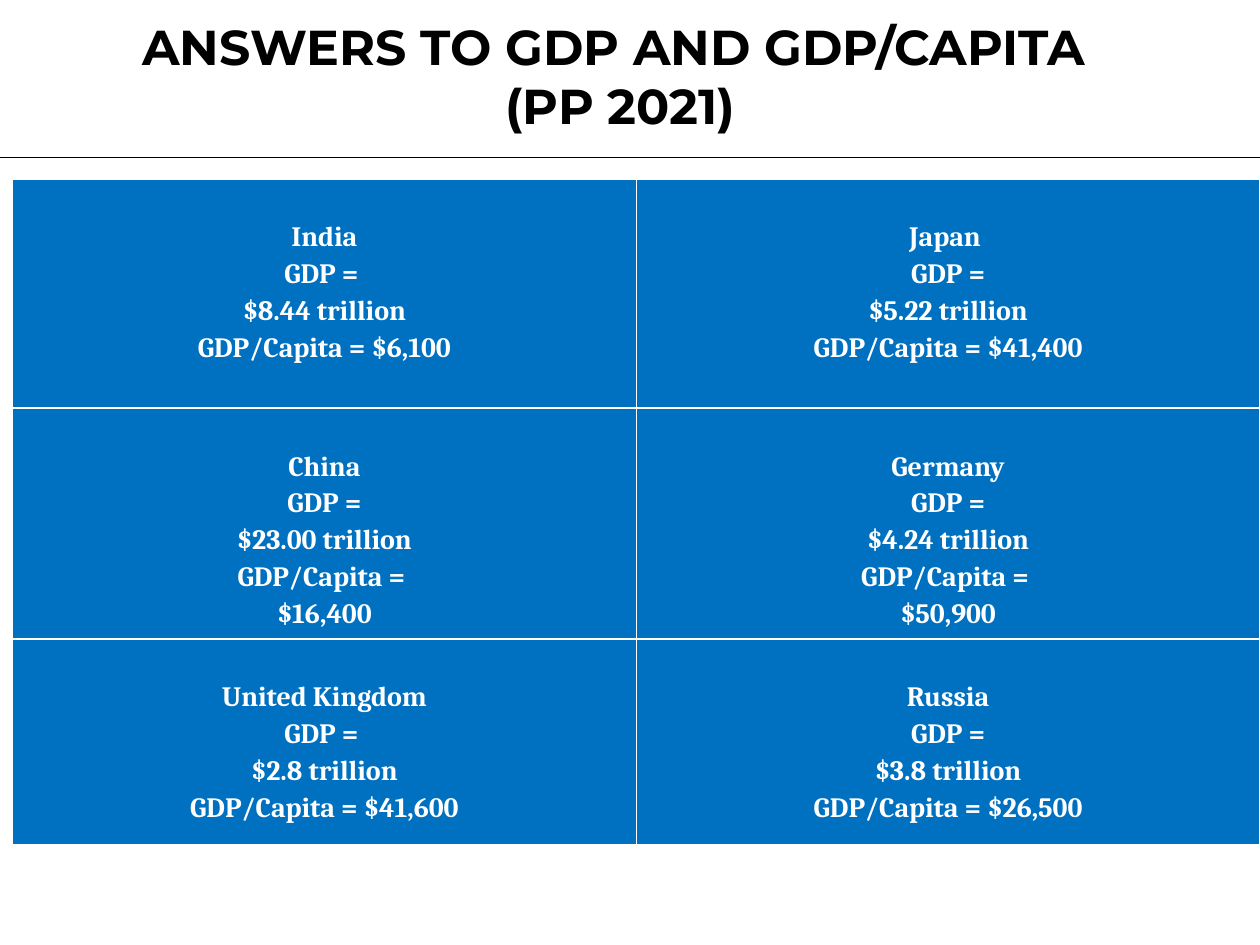
from pptx import Presentation
from pptx.dml.color import RGBColor
from pptx.enum.shapes import MSO_CONNECTOR
from pptx.enum.text import MSO_ANCHOR, PP_ALIGN
from pptx.oxml import parse_xml
from pptx.oxml.ns import nsdecls
from pptx.util import Inches, Pt
from lxml.etree import SubElement
from pptx.oxml.ns import qn

COLORS = {"text": "000000", "rule": "000000", "cell": "0070C0", "light": "FFFFFF"}

COUNTRIES = [
    [
        ["India", "GDP = ", "$8.44 trillion", "GDP/Capita = $6,100"],
        ["Japan ", "GDP =", "$5.22 trillion", "GDP/Capita = $41,400"],
    ],
    [
        ["China", "GDP =", "$23.00 trillion", "GDP/Capita = ", "$16,400"],
        ["Germany", "GDP =", "$4.24 trillion", "GDP/Capita = ", "$50,900"],
    ],
    [
        ["United Kingdom", "GDP = ", "$2.8 trillion", "GDP/Capita = $41,600"],
        ["Russia", "GDP =", "$3.8 trillion", "GDP/Capita = $26,500"],
    ],
]
ROW_HEIGHTS = [1.82, 1.82, 1.63]


def style_paragraph(para, font_name, size, color):
    para.alignment = PP_ALIGN.CENTER
    para.font.name = font_name
    para.font.size = Pt(size)
    para.font.bold = True
    para.font.color.rgb = RGBColor.from_string(COLORS[color])


def add_title(page, left, top, width, height):
    box = page.shapes.add_textbox(Inches(left), Inches(top), Inches(width), Inches(height))
    frame = box.text_frame
    frame.word_wrap = True
    frame.vertical_anchor = MSO_ANCHOR.MIDDLE
    para = frame.paragraphs[0]
    para.text = "ANSWERS TO GDP AND GDP/CAPITA \v(PP 2021)"
    style_paragraph(para, "Montserrat", 28, "text")


def add_rule(page, left, top, width):
    rule = page.shapes.add_connector(
        MSO_CONNECTOR.STRAIGHT, Inches(left), Inches(top), Inches(left + width), Inches(top)
    )
    rule.line.color.rgb = RGBColor.from_string(COLORS["rule"])
    rule.line.width = Pt(1)
    SubElement(rule._element.spPr, qn("a:effectLst"))


def set_borders(cell):
    properties = cell._tc.get_or_add_tcPr()
    for index, side in enumerate(("lnL", "lnR", "lnT", "lnB")):
        border = parse_xml(
            f'<a:{side} {nsdecls("a")} w="{Pt(1)}"><a:solidFill>'
            f'<a:srgbClr val="{COLORS["light"]}"/></a:solidFill></a:{side}>'
        )
        properties.insert(index, border)


def fill_cell(cell, lines):
    cell.fill.solid()
    cell.fill.fore_color.rgb = RGBColor.from_string(COLORS["cell"])
    set_borders(cell)
    cell.margin_left = cell.margin_right = Inches(0.04)
    cell.margin_top, cell.margin_bottom = Inches(0.3), Inches(0)
    cell.vertical_anchor = MSO_ANCHOR.TOP
    cell.text = "\n".join(lines)
    for para in cell.text_frame.paragraphs:
        para.line_spacing = 1.15
        style_paragraph(para, "Cambria", 16, "light")


def add_country_table(page, left, top, width):
    columns = len(COUNTRIES[0])
    table = page.shapes.add_table(
        len(COUNTRIES), columns, Inches(left), Inches(top),
        Inches(width), Inches(sum(ROW_HEIGHTS)),
    ).table
    table.first_row = table.horz_banding = False
    for column in table.columns:
        column.width = Inches(width / columns)
    for row, height, countries in zip(table.rows, ROW_HEIGHTS, COUNTRIES):
        row.height = Inches(height)
        for cell, lines in zip(row.cells, countries):
            fill_cell(cell, lines)


def main():
    deck = Presentation()
    deck.slide_width, deck.slide_height = Inches(10), Inches(7.5)
    page = deck.slides.add_slide(deck.slide_layouts[6])

    # Heading with the rule below it
    add_rule(page, 0, 1.25, 10)
    add_title(page, 0.01, 0.1, 9.83, 1)

    # One cell per country
    add_country_table(page, 0.1, 1.42, 9.9)

    deck.save("out.pptx")


if __name__ == "__main__":
    main()
